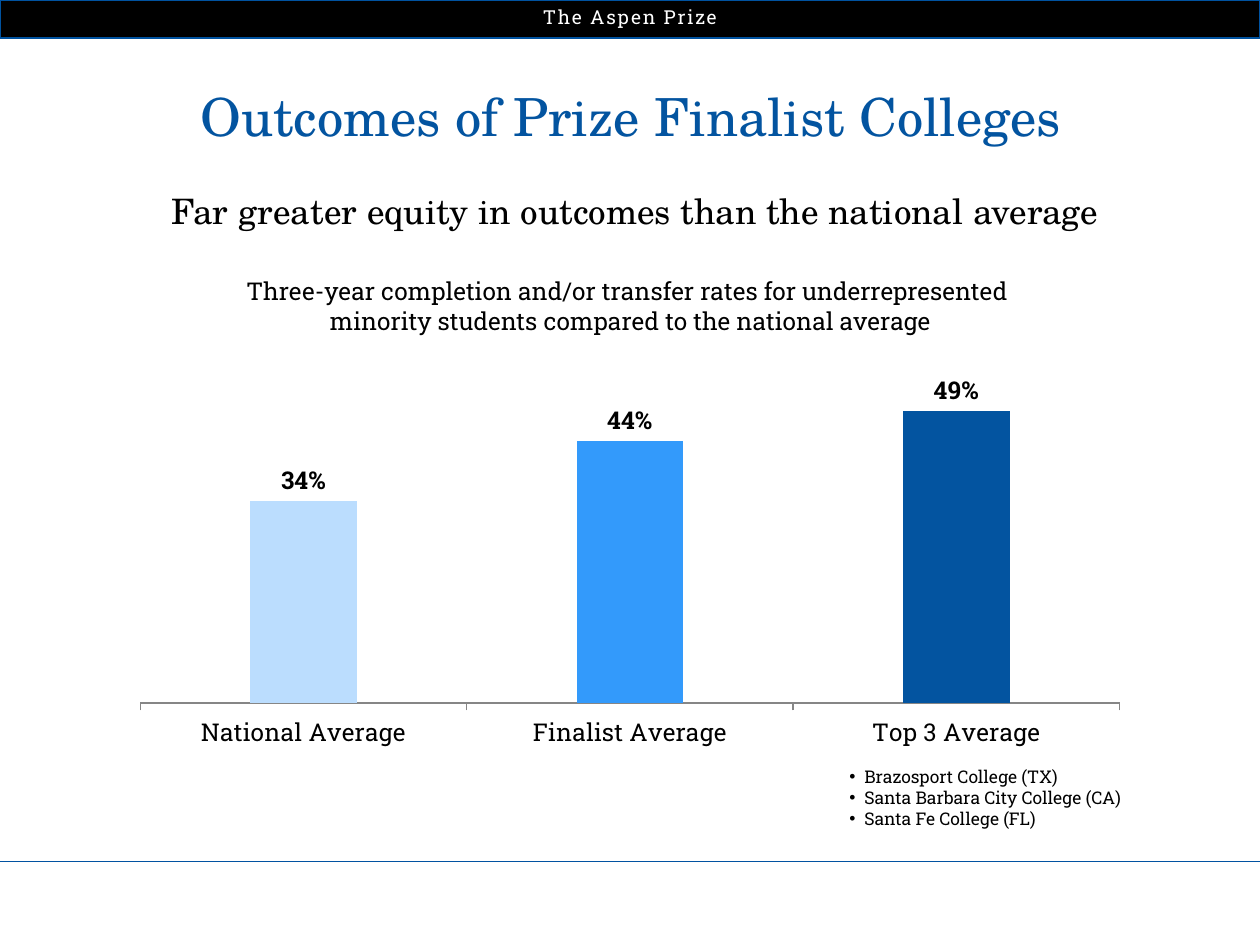
import pptx
import pptx.chart.data
import pptx.dml.color
import pptx.enum.chart
import pptx.enum.shapes
import pptx.enum.text
import pptx.oxml.ns
import pptx.util
from lxml import etree

EMU_PER_PX = 914400 / 126
SLAB = "Roboto Slab"
SCHOLA = "TeX Gyre Schola"
BLUE = "0354A0"


def color(hex_string):
    return pptx.dml.color.RGBColor.from_string(hex_string)


def px(*lengths):
    return [pptx.util.Emu(round(length * EMU_PER_PX)) for length in lengths]


presentation = pptx.Presentation()
presentation.slide_width, presentation.slide_height = px(1260, 945)
slide = presentation.slides.add_slide(presentation.slide_layouts[6])

# Header band
band = slide.shapes.add_shape(pptx.enum.shapes.MSO_SHAPE.RECTANGLE, *px(0, 0, 1260, 38))
band.shadow.inherit = False
band.fill.solid()
band.fill.fore_color.rgb = color("000000")
band.line.color.rgb = color("00529F")
band.line.width = pptx.util.Pt(0.75)

# Footer rule
rule = slide.shapes.add_connector(
    pptx.enum.shapes.MSO_CONNECTOR.STRAIGHT, *px(0, 861, 1260, 861))
rule.line.color.rgb = color("0152A1")
rule.line.width = pptx.util.Pt(0.5)
etree.SubElement(rule._element.spPr, pptx.oxml.ns.qn("a:effectLst"))

# Column chart
chart_data = pptx.chart.data.CategoryChartData(number_format="0%")
chart_data.categories = ["National Average", "Finalist Average", "Top 3 Average"]
chart_data.add_series("Series 1", [0.34, 0.44, 0.49])
chart = slide.shapes.add_chart(
    pptx.enum.chart.XL_CHART_TYPE.COLUMN_CLUSTERED, *px(121, 272, 1018, 529), chart_data).chart
chart.has_legend = False
chart.has_title = False
chart.font.name = "Calibri"
chart.font.size = pptx.util.Pt(10)
chart.font.color.rgb = color("000000")

value_axis = chart.value_axis
value_axis.visible = False
value_axis.has_major_gridlines = False
value_axis.minimum_scale = 0
value_axis.maximum_scale = 0.6
value_axis.tick_labels.number_format = "0%"
value_axis.tick_labels.number_format_is_linked = False

category_axis = chart.category_axis
category_axis.major_tick_mark = pptx.enum.chart.XL_TICK_MARK.OUTSIDE
category_axis.format.line.color.rgb = color("868686")

plot = chart.plots[0]
plot.gap_width = 206
plot.overlap = -7
plot.vary_by_categories = False
series = plot.series[0]
series.format.fill.solid()
series.format.fill.fore_color.rgb = color("1F497D")
for index, fill in enumerate(["BBDDFE", "339AFB", BLUE]):
    point = series.points[index]
    point.format.fill.solid()
    point.format.fill.fore_color.rgb = color(fill)

labels = series.data_labels
labels.show_value = True
labels.number_format = "0%"
labels.number_format_is_linked = False
labels.position = pptx.enum.chart.XL_LABEL_POSITION.OUTSIDE_END
for font in (labels.font, category_axis.tick_labels.font):
    font.name = SLAB
    font.size = pptx.util.Pt(14)
    font.color.rgb = color("000000")
labels.font.bold = True

# Fixed inner plot area
plot_area = chart._chartSpace.chart.plotArea
for old_layout in plot_area.findall(pptx.oxml.ns.qn("c:layout")):
    plot_area.remove(old_layout)
layout = etree.Element(pptx.oxml.ns.qn("c:layout"))
plot_area.insert(0, layout)
manual = etree.SubElement(layout, pptx.oxml.ns.qn("c:manualLayout"))
for tag, value in [("layoutTarget", "inner"), ("xMode", "edge"), ("yMode", "edge"),
                   ("x", "0.019"), ("y", "0.14"), ("w", "0.962"), ("h", "0.675")]:
    etree.SubElement(manual, pptx.oxml.ns.qn("c:" + tag)).set("val", value)

# Text: box, wording, font, size, colour, letter spacing, bulleted
texts = [
    ((0, -1, 1260, 37), "The Aspen Prize", SLAB, 11, "FFFFFF", 1, False),
    ((52, 183, 1166, 55), "Far greater equity in outcomes than the national average",
     SCHOLA, 20, "000000", 0, False),
    ((28, 78, 1206, 77), "Outcomes of Prize Finalist Colleges", SCHOLA, 30, BLUE, 0, False),
    ((116, 270, 1029, 72),
     "Three-year completion and/or transfer rates for underrepresented \v"
     "minority students compared to the national average", SLAB, 14, "000000", 0, False),
    ((837, 760, 417, 77),
     "Brazosport College (TX)\nSanta Barbara City College (CA)\nSanta Fe College (FL)",
     SLAB, 10, "000000", 0, True),
]
for box, wording, font_name, size, text_color, spacing, bulleted in texts:
    text_frame = slide.shapes.add_textbox(*px(*box)).text_frame
    text_frame.word_wrap = True
    text_frame.auto_size = pptx.enum.text.MSO_AUTO_SIZE.SHAPE_TO_FIT_TEXT
    text_frame.text = wording
    for paragraph in text_frame.paragraphs:
        if bulleted:
            properties = paragraph._p.get_or_add_pPr()
            indent = px(15)[0]
            properties.set("marL", str(indent))
            properties.set("indent", str(-indent))
            etree.SubElement(properties, pptx.oxml.ns.qn("a:buFont")).set("typeface", "Arial")
            etree.SubElement(properties, pptx.oxml.ns.qn("a:buChar")).set("char", "•")
        else:
            paragraph.alignment = pptx.enum.text.PP_ALIGN.CENTER
        for run in paragraph.runs:
            run.font.name = font_name
            run.font.size = pptx.util.Pt(size)
            run.font.color.rgb = color(text_color)
            if spacing:
                run._r.get_or_add_rPr().set("spc", str(spacing * 100))

presentation.save("out.pptx")
